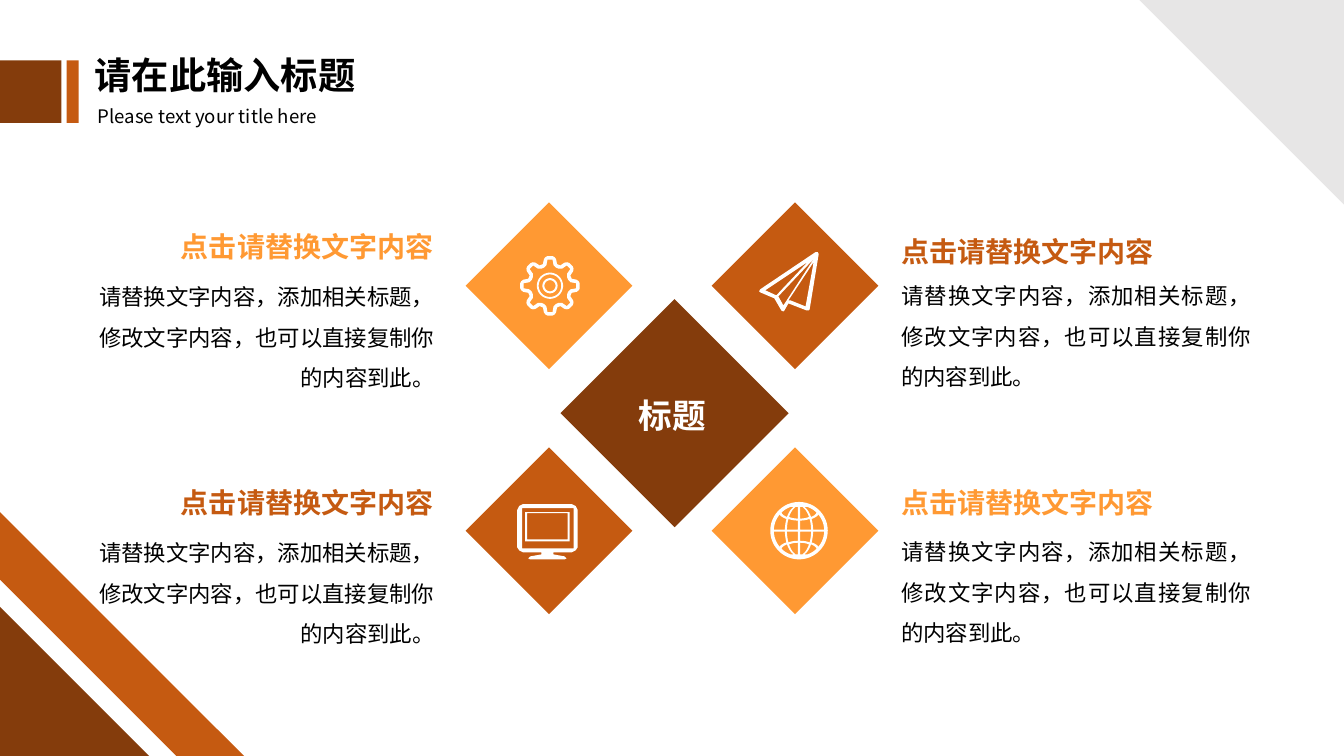
from math import cos, pi, sin, sqrt
from itertools import pairwise
from typing import NamedTuple

from lxml.etree import SubElement
from pptx import Presentation
from pptx.dml.color import RGBColor
from pptx.enum.shapes import MSO_SHAPE as Kind
from pptx.enum.text import MSO_ANCHOR as Anchor, MSO_AUTO_SIZE as Fit, PP_ALIGN as Align
from pptx.oxml.ns import qn
from pptx.util import Pt

PX = 9144  # 100 px to the inch
BROWN = RGBColor(0x84, 0x3C, 0x0C)
RUST = RGBColor(0xC5, 0x5A, 0x11)
AMBER = RGBColor(0xFF, 0x99, 0x33)
GRAY = RGBColor(0xE7, 0xE6, 0xE6)
WHITE = RGBColor(0xFF, 0xFF, 0xFF)
BLACK = RGBColor(0, 0, 0)
HAN = "Noto Sans CJK SC"
HEAD = "点击请替换文字内容"
BODY = "请替换文字内容，添加相关标题，修改文字内容，也可以直接复制你的内容到此。"

Dot = tuple[float, float]
Loop = list[Dot]


class Box(NamedTuple):
    x: int
    y: int
    w: int
    h: int


class Block(NamedTuple):
    color: RGBColor
    box: Box
    turn: int = 0
    kind: Kind = Kind.RECTANGLE


class Note(NamedTuple):
    color: RGBColor
    align: Align
    head: Box
    body: Box


deck = Presentation()
deck.slide_width, deck.slide_height = 1333 * PX, 750 * PX
slide = deck.slides.add_slide(deck.slide_layouts[6])
shapes = slide.shapes


def paint(shape, color: RGBColor):
    shape.shadow.inherit = False
    shape.fill.solid()
    shape.fill.fore_color.rgb = color
    shape.line.fill.background()
    return shape


def block(item: Block):
    shape = shapes.add_shape(item.kind, *(n * PX for n in item.box))
    shape.rotation = item.turn
    return paint(shape, item.color)


def outline(loops: list[Loop], color: RGBColor = WHITE) -> None:
    """Fill the first loop; the loops inside it become holes."""
    pen = None
    for loop in loops:
        first, *rest = [(round(x * PX), round(y * PX)) for x, y in loop]
        if pen is None:
            pen = shapes.build_freeform(*first, scale=1.0)
        else:
            pen.move_to(*first)
        pen.add_line_segments(rest, close=True)
    paint(pen.convert_to_shape(), color)


def write(shape, text: str, color: RGBColor, align: Align, frame: dict,
          font: dict, lead: float | None = None) -> None:
    tf = shape.text_frame
    for key, value in frame.items():
        setattr(tf, key, value)
    para = tf.paragraphs[0]
    para.alignment = align
    if lead:
        para.line_spacing = lead
    run = para.add_run()
    run.text = text
    for key, value in font.items():
        setattr(run.font, key, value)
    run.font.color.rgb = color
    SubElement(run.font._element, qn("a:ea"), typeface=HAN)


def label(box: Box, *args, **more) -> None:
    write(shapes.add_textbox(*(n * PX for n in box)), *args, **more)


# Outline rules for the icons
def ring(x: float, y: float, r: float) -> Loop:
    return [(x + r * cos(k * pi / 24), y + r * sin(k * pi / 24)) for k in range(48)]


def rect(x: int, y: int, w: int, h: int) -> Loop:
    return [(x, y), (x + w, y), (x + w, y + h), (x, y + h)]


def cog(x: float, y: float, tooth: Loop) -> Loop:
    both = [(-a, b) for a, b in tooth] + tooth[::-1]
    return [(x + a * cos(t) - b * sin(t), y + a * sin(t) + b * cos(t))
            for t in (k * pi / 4 for k in range(8)) for a, b in both]


def cell(x: float, y: float, u0: float, u1: float, v0: int, v1: int) -> Loop:
    """One globe hole between two meridians and two parallels."""
    steps = [k / 6 for k in range(6)]
    edge = ([(s, 0) for s in steps] + [(1, s) for s in steps]
            + [(1 - s, 1) for s in steps] + [(0, 1 - s) for s in steps])
    dots = []
    for s, t in edge:
        u = u0 + (u1 - u0) * s
        top, low = (max(-23.5, min(23.5, v * (11 + 6 * u * u))) for v in (v0, v1))
        top, low = top + (v0 > -3), low - (v1 < 3)
        b = top + (low - top) * t
        w = sqrt(25 ** 2 - b * b)
        left, right = u0 * w + (u0 > -1), u1 * w - (u1 < 1)
        dots.append((x + left + (right - left) * s, y + b))
    return dots


# Title and its marks
PLAIN = dict(word_wrap=True, auto_size=Fit.SHAPE_TO_FIT_TEXT)
label(Box(84, 47, 501, 55), "请在此输入标题", BLACK, Align.LEFT, PLAIN,
      dict(name=HAN, size=Pt(26.6), bold=True))
label(Box(87, 99, 257, 33), "Please text your title here", BLACK, Align.JUSTIFY,
      PLAIN, dict(name=HAN, size=Pt(13.3)))

# Marks, diamonds and corner triangles
for item in (
    Block(BROWN, Box(0, 60, 61, 62)),
    Block(RUST, Box(66, 60, 12, 62)),
    Block(RUST, Box(730, 225, 117, 117), 45),
    Block(AMBER, Box(730, 468, 117, 117), 45),
    Block(AMBER, Box(486, 225, 117, 117), 45),
    Block(RUST, Box(486, 468, 117, 117), 45),
    Block(BROWN, Box(589, 330, 160, 160), 45),
    Block(GRAY, Box(1130, 0, 203, 203), 180, Kind.RIGHT_TRIANGLE),
    Block(BROWN, Box(0, 602, 148, 148), 0, Kind.RIGHT_TRIANGLE),
):
    block(item)
outline([[(0, 508), (0, 575), (175, 750), (242, 750)]], RUST)
write(block(Block(BROWN, Box(623, 387, 88, 50))), "标题", WHITE, Align.CENTER,
      dict(word_wrap=False, auto_size=Fit.SHAPE_TO_FIT_TEXT, vertical_anchor=Anchor.TOP),
      dict(name=HAN, size=Pt(24), bold=True))

# Paper plane
outline([
    [(811, 250), (809, 250), (754, 287), (753, 289), (754, 290), (768, 296), (775, 308),
     (777, 309), (778, 308), (782, 301), (800, 308), (802, 308), (803, 307), (812, 252)],
    [(799, 304), (784, 298), (782, 298), (807, 260)],
    [(772, 294), (807, 257), (777, 303)],
    [(759, 288), (801, 260), (770, 293)],
])

# Globe
MID = (792.5, 526.5)
outline([ring(*MID, 28.5)] + [
    cell(*MID, *us, *vs)
    for us in pairwise((-1, -0.52, 0, 0.52, 1)) for vs in pairwise((-3, -1, 0, 1, 3))])

# Gear
HUB = (545.5, 283.5)
outline([
    cog(*HUB, [(7, -21.5), (6, -26.5), (4.5, -28.5), (2.5, -29.5)]),
    cog(*HUB, [(6, -18), (3.5, -20.5), (2.5, -26)]),
])
for far, near in ((13, 11.2), (7.5, 5.5)):
    outline([ring(*HUB, far), ring(*HUB, near)])

# Monitor
outline([rect(521, 508, 44, 29), rect(523, 509, 40, 26)])
half = [(24, 500), (28, 502), (30, 506), (30, 543), (28, 546), (24, 548),
        (6, 548), (6, 550), (17, 552), (19, 554), (17, 555)]
outline([[(543 + x, y) for x, y in half] + [(543 - x, y) for x, y in half[::-1]],
         rect(518, 504, 51, 40)])

# Four notes
BARE = dict(margin_left=0, margin_right=0, margin_top=0, margin_bottom=0,
            auto_size=Fit.SHAPE_TO_FIT_TEXT)
for note in (
    Note(AMBER, Align.RIGHT, Box(178, 228, 252, 34), Box(84, 268, 347, 116)),
    Note(RUST, Align.RIGHT, Box(178, 482, 252, 34), Box(84, 522, 347, 116)),
    Note(RUST, Align.JUSTIFY, Box(894, 233, 252, 34), Box(894, 267, 347, 116)),
    Note(AMBER, Align.JUSTIFY, Box(894, 482, 252, 34), Box(894, 521, 347, 116)),
):
    label(note.body, BODY, BLACK, note.align, BARE | dict(word_wrap=True),
          dict(name="Arial", size=Pt(16)), lead=1.5)
    label(note.head, HEAD, note.color, note.align, BARE | dict(word_wrap=False),
          dict(name="Arial", size=Pt(20), bold=True))

deck.save("out.pptx")
